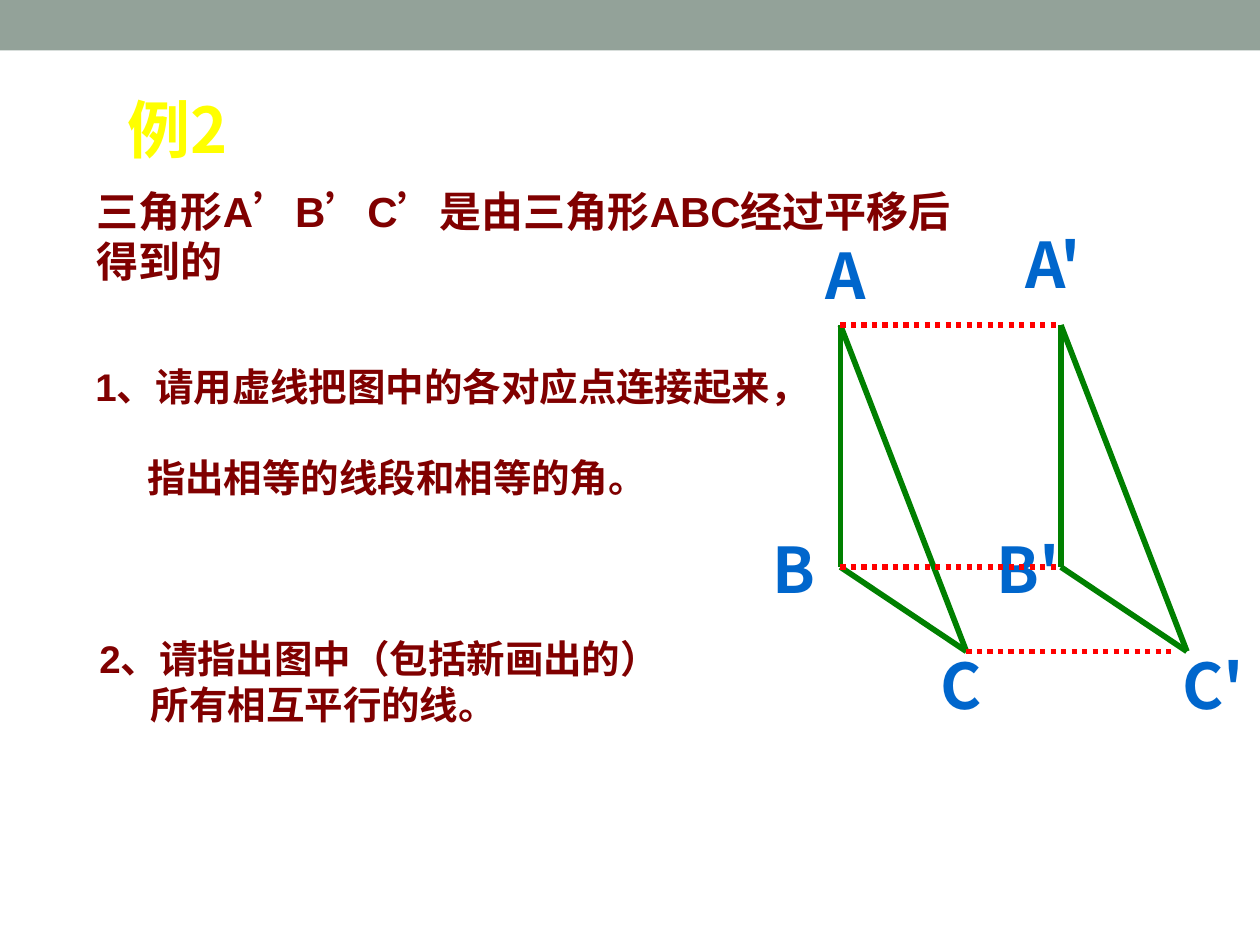
from dataclasses import dataclass
from pptx import Presentation, util as u
from pptx.dml.color import RGBColor
from pptx.enum import dml, shapes, text
from pptx.oxml.ns import qn


@dataclass(frozen=True)
class Theme:
    bar: str = "93A299"
    title: str = "FFFF00"
    body: str = "800000"
    label: str = "0066CC"
    edge: str = "008000"
    link: str = "FF0000"
    latin: str = "Arial"
    asian: str = "Noto Sans CJK SC"
    display_size: int = 36
    statement_size: int = 24
    task_size: int = 22


THEME = Theme()
WIDTH, HEIGHT = 10, 7.5
BAR_HEIGHT = 0.4
TITLE = ("例2", (0.9, 0.72, 1.02, 0.5))
STATEMENT = ("三角形A’B’C’是由三角形ABC经过平移后得到的", (0.67, 1.42, 7.29, 0.93))
TASKS = [
    (["1、请用虚线把图中的各对应点连接起来，", "指出相等的线段和相等的角。"],
     (0.66, 2.83, 5.9, 1.56), 26),
    (["2、请指出图中（包括新画出的）", "所有相互平行的线。"],
     (0.69, 4.99, 4.67, 1.2), 0),
]
VERTICES = {"A": (6.67, 2.58), "B": (6.67, 4.5), "C": (7.67, 5.17)}
SHIFT = 1.75
LINK_LENGTHS = {"A": SHIFT, "B": SHIFT, "C": 1.66}
LABEL_CENTERS = {
    "A": (6.71, 1.88), "B": (6.3, 4.21), "C": (7.63, 5.13),
    "A'": (8.36, 1.79), "B'": (8.16, 4.21), "C'": (9.63, 5.13),
}
LABEL_WIDTH, LABEL_HEIGHT = 0.4, 0.58


def write(box, lines, size, color, font=THEME.latin, align=text.PP_ALIGN.LEFT,
          wrap=True, inset=(0.1, 0.05), gap=0, indent=0):
    frame = box.text_frame
    frame.auto_size = text.MSO_AUTO_SIZE.NONE
    frame.word_wrap = wrap
    frame.vertical_anchor = text.MSO_ANCHOR.TOP
    frame.margin_left = frame.margin_right = u.Inches(inset[0])
    frame.margin_top = frame.margin_bottom = u.Inches(inset[1])
    for index, line in enumerate(lines):
        para = frame.add_paragraph() if index else frame.paragraphs[0]
        para.alignment = align
        para.line_spacing = 1.0
        para.space_before = u.Pt(gap if index else 0)
        if index and indent:
            para._p.get_or_add_pPr().set("marL", str(u.Inches(indent)))
        span = para.add_run()
        span.text = line
        span.font.name = font
        span.font.size = u.Pt(size)
        span.font.bold = True
        span.font.color.rgb = RGBColor.from_string(color)
        asian = span._r.get_or_add_rPr().makeelement(
            qn("a:ea"), {"typeface": THEME.asian})
        span._r.rPr.append(asian)


def add_box(page, place):
    return page.shapes.add_textbox(*map(u.Inches, place))


def add_line(page, start, end, color, width, dash=None):
    line = page.shapes.add_connector(
        shapes.MSO_CONNECTOR.STRAIGHT, *map(u.Inches, (*start, *end)))
    line.line.color.rgb = RGBColor.from_string(color)
    line.line.width = u.Pt(width)
    if dash:
        line.line.dash_style = dash
    properties = line._element.spPr
    properties.append(properties.makeelement(qn("a:effectLst"), {}))


def add_bar(page):
    bar = page.shapes.add_shape(
        shapes.MSO_SHAPE.RECTANGLE, 0, 0, u.Inches(WIDTH), u.Inches(BAR_HEIGHT))
    bar.shadow.inherit = False
    bar.fill.solid()
    bar.fill.fore_color.rgb = RGBColor.from_string(THEME.bar)
    bar.line.fill.background()


def add_texts(page):
    display = dict(size=THEME.display_size, font=THEME.asian, wrap=False,
                   align=text.PP_ALIGN.CENTER, inset=(0, 0))
    title = page.shapes.title
    words, place = TITLE
    title.left, title.top, title.width, title.height = map(u.Inches, place)
    write(title, [words], color=THEME.title, **display)
    words, place = STATEMENT
    write(add_box(page, place), [words], THEME.statement_size, THEME.body)
    for lines, place, gap in TASKS:
        write(add_box(page, place), lines, THEME.task_size, THEME.body,
              gap=gap, indent=0.41)
    for name, (center, top) in LABEL_CENTERS.items():
        place = (center - LABEL_WIDTH / 2, top, LABEL_WIDTH, LABEL_HEIGHT)
        write(add_box(page, place), [name], color=THEME.label, **display)


def add_triangles(page):
    for offset in (0, SHIFT):
        corners = [(x + offset, y) for x, y in VERTICES.values()]
        for start, end in zip(corners, corners[1:] + corners[:1]):
            add_line(page, start, end, THEME.edge, 3.25)
    for name, length in LINK_LENGTHS.items():
        x, y = VERTICES[name]
        add_line(page, (x, y), (x + length, y), THEME.link, 3,
                 dml.MSO_LINE.ROUND_DOT)


def main():
    deck = Presentation()
    deck.slide_width, deck.slide_height = u.Inches(WIDTH), u.Inches(HEIGHT)
    page = deck.slides.add_slide(deck.slide_layouts[5])
    add_bar(page)
    add_texts(page)
    add_triangles(page)
    deck.save("out.pptx")


if __name__ == "__main__":
    main()
